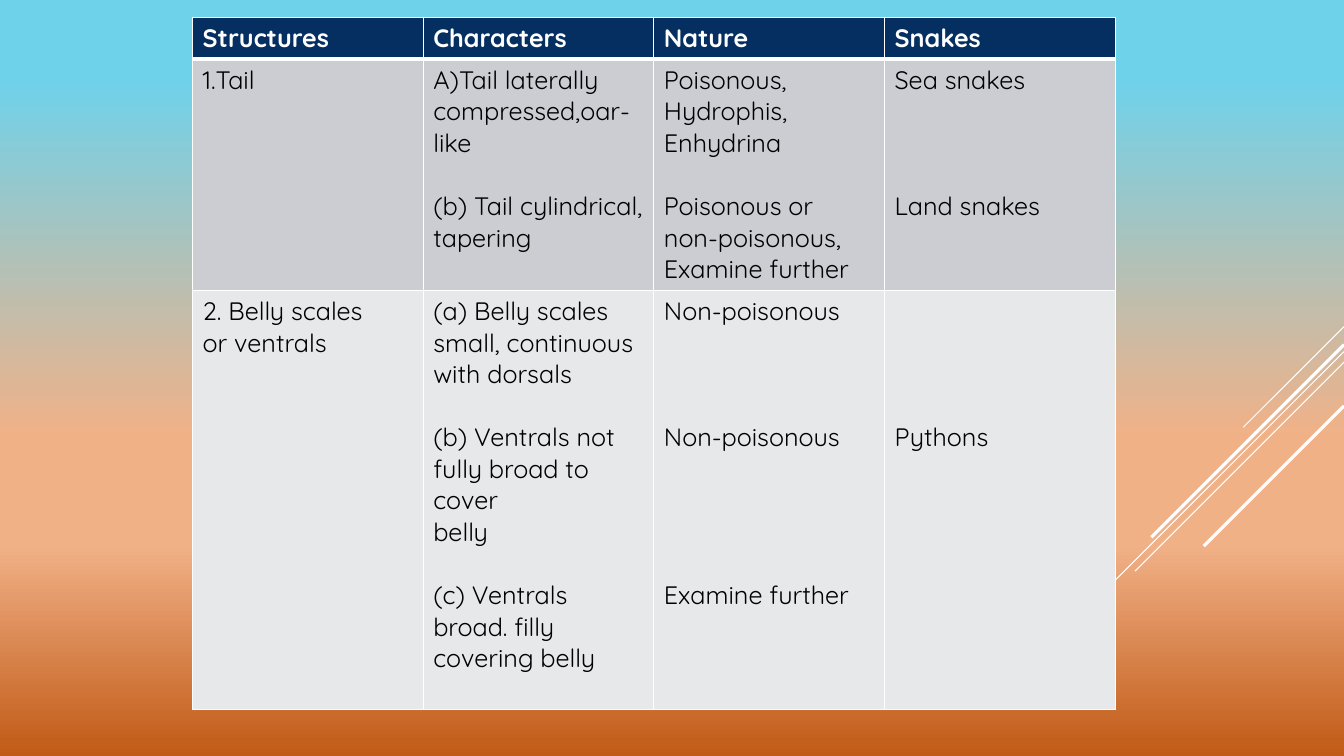
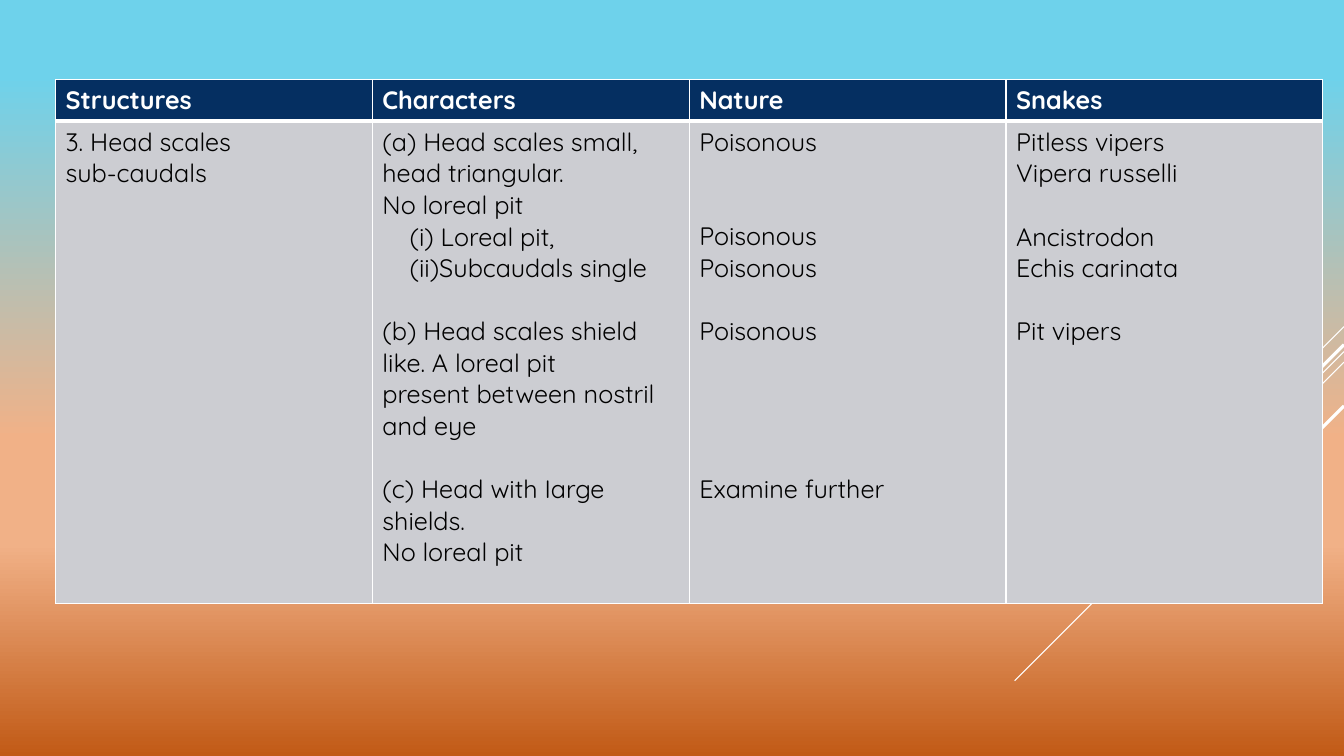
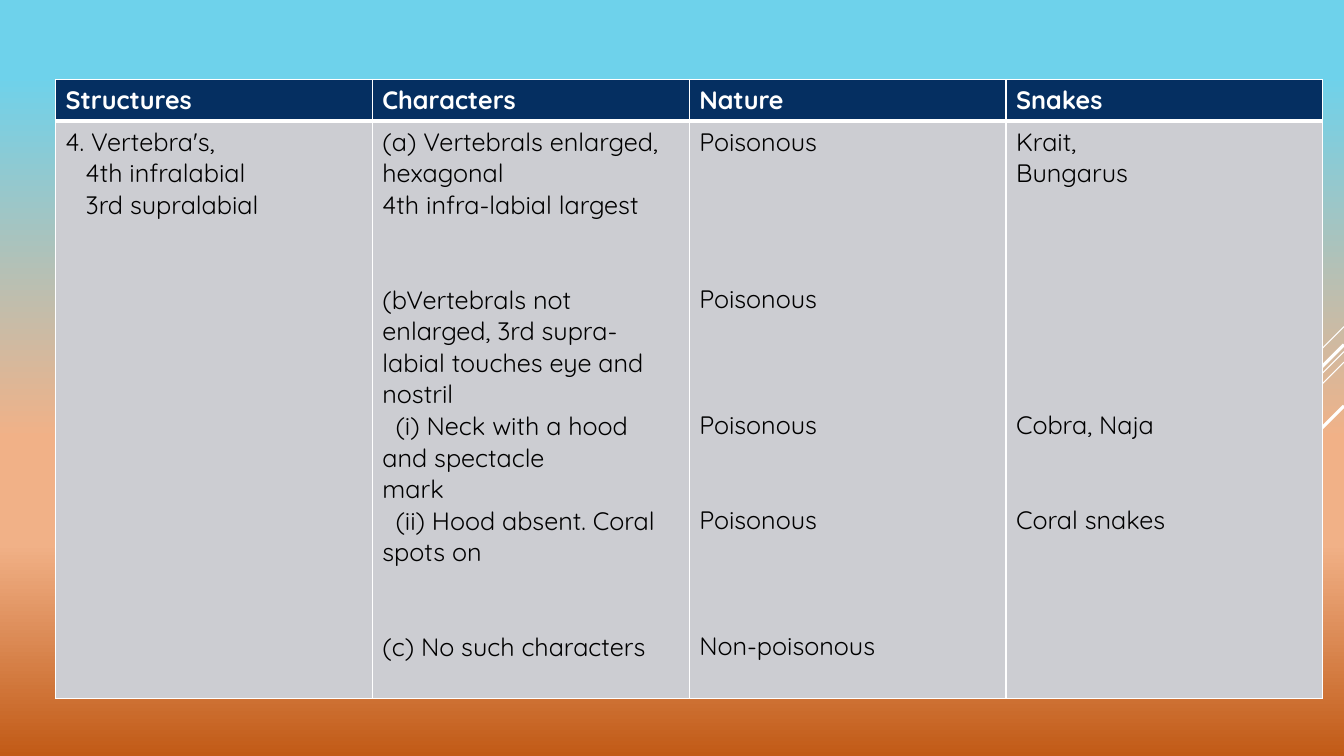
"""Build three slides with a key for telling poisonous snakes apart."""
from dataclasses import dataclass
from itertools import product

from lxml import etree
from pptx import Presentation
from pptx import util as u
from pptx.dml.color import RGBColor
from pptx.enum import shapes
from pptx.oxml.ns import qn

WIDTH, HEIGHT = u.Inches(13.33), u.Inches(7.5)
FONT, SIZE = "Quicksand", u.Pt(18)
LEADING, INSET = u.Pt(22.5), u.Inches(0.05)
COLORS = {"white": "FFFFFF", "ink": "000000", "header": "052F61",
          "odd": "CCCDD2", "even": "E7E8EA"}
SKY = ((10, "6ED2EB"), (58, "F1B187"), (72, "F1B187"), (100, "C15A16"))
HEADINGS = ("Structures", "Characters", "Nature", "Snakes")


@dataclass(frozen=True)
class Streak:
    top: float
    reach: float
    weight: float


@dataclass(frozen=True)
class Line:
    text: str
    gap: int = 0
    indent: float = 0


@dataclass(frozen=True)
class Entry:
    lines: int
    cells: tuple[tuple[Line, ...], ...]


@dataclass(frozen=True)
class Key:
    left: float
    top: float
    width: float
    entries: tuple[Entry, ...]


STREAKS = (Streak(43.2, 7.5, 0.75), Streak(46.5, 24.5, 0.75),
           Streak(47.9, 15.55, 0.75), Streak(45.6, 14.33, 2.25),
           Streak(53.7, 10.43, 2.25))

TAIL = Entry(7, (
    (Line("1.Tail"),),
    (Line("A)Tail laterally compressed,oar-like"),
     Line("(b) Tail cylindrical, tapering", gap=1)),
    (Line("Poisonous,"), Line("Hydrophis,"), Line("Enhydrina"),
     Line("Poisonous or", gap=1), Line("non-poisonous,"),
     Line("Examine further")),
    (Line("Sea snakes"), Line("Land snakes", gap=3)),
))
BELLY = Entry(13, (
    (Line("2. Belly scales"), Line("or ventrals")),
    (Line("(a) Belly scales small, continuous"), Line("with dorsals"),
     Line("(b) Ventrals not fully broad to cover", gap=1), Line("belly"),
     Line("(c) Ventrals broad. filly covering belly", gap=1)),
    (Line("Non-poisonous"), Line("Non-poisonous", gap=3),
     Line("Examine further", gap=4)),
    (Line("Pythons", gap=4),),
))
HEAD = Entry(15, (
    (Line("3. Head scales"), Line("sub-caudals")),
    (Line("(a) Head scales small, head triangular."), Line("No loreal pit"),
     Line("(i) Loreal pit,", indent=0.27),
     Line("(ii)Subcaudals single", indent=0.27),
     Line("(b) Head scales shield like. A loreal pit", gap=1),
     Line("present between nostril and eye"),
     Line("(c) Head with Iarge shields.", gap=1), Line("No loreal pit")),
    (Line("Poisonous"), Line("Poisonous", gap=2), Line("Poisonous"),
     Line("Poisonous", gap=1), Line("Examine further", gap=4)),
    (Line("Pitless vipers"), Line("Vipera russelli"),
     Line("Ancistrodon", gap=1), Line("Echis carinata"),
     Line("Pit vipers", gap=1)),
))
VERTEBRAE = Entry(18, (
    (Line("4. Vertebra's,"), Line("4th infralabial", indent=0.2),
     Line("3rd supralabial", indent=0.2)),
    (Line("(a) Vertebrals enlarged, hexagonal"),
     Line("4th infra-labial largest"),
     Line("(bVertebrals not enlarged, 3rd supra-", gap=2),
     Line("labial touches eye and nostril"),
     Line("(i) Neck with a hood", indent=0.13), Line("and spectacle"),
     Line("mark"),
     Line("(ii) Hood absent. Coral spots on", indent=0.13),
     Line("(c) No such characters", gap=2)),
    (Line("Poisonous"), Line("Poisonous", gap=4), Line("Poisonous", gap=3),
     Line("Poisonous", gap=2), Line("Non-poisonous", gap=3)),
    (Line("Krait,"), Line("Bungarus"), Line("Cobra, Naja", gap=7),
     Line("Coral snakes", gap=2)),
))
HEADER = Entry(1, tuple((Line(heading),) for heading in HEADINGS))
KEYS = (Key(14.33, 2.3, 68.64, (TAIL, BELLY)),
        Key(4.13, 10.5, 94.3, (HEAD,)),
        Key(4.13, 10.5, 94.3, (VERTEBRAE,)))


def across(percent: float) -> int:
    """Turn a share of the slide's width into a length."""
    return int(WIDTH * percent / 100)


def down(percent: float) -> int:
    """Turn a share of the slide's height into a length."""
    return int(HEIGHT * percent / 100)


def rgb(name: str) -> RGBColor:
    """Look up a named colour."""
    return RGBColor.from_string(COLORS[name])


def add_color(parent, value: str) -> None:
    """Append a plain colour to a fill or gradient stop."""
    etree.SubElement(parent, qn("a:srgbClr"), val=value)


def paint_sky(master) -> None:
    """Give the master its vertical gradient."""
    fill = master.background.fill
    fill.gradient()
    fill.gradient_angle = 270
    stops = master.element.find(".//" + qn("p:bg")).find(".//" + qn("a:gsLst"))
    for stop in list(stops):
        stops.remove(stop)
    for percent, value in SKY:
        add_color(etree.SubElement(stops, qn("a:gs"), pos=str(percent * 1000)), value)


def draw_streak(slide, streak: Streak) -> None:
    """Draw a line falling at 45 degrees from the right edge."""
    reach, top = across(streak.reach), down(streak.top)
    ray = slide.shapes.add_connector(shapes.MSO_CONNECTOR.STRAIGHT,
                                     WIDTH, top, WIDTH - reach, top + reach)
    ray.line.color.rgb = rgb("white")
    ray.line.width = u.Pt(streak.weight)
    etree.SubElement(ray.element.spPr, qn("a:effectLst"))


def write(cell, lines: tuple[Line, ...], *, color: str, bold: bool) -> None:
    """Fill a cell with formatted paragraphs."""
    frame = cell.text_frame
    cell.margin_top = INSET + lines[0].gap * LEADING
    for number, line in enumerate(lines):
        paragraph = frame.add_paragraph() if number else frame.paragraphs[0]
        if number and line.gap:
            paragraph.space_before = u.Emu(line.gap * LEADING)
        if line.indent:
            properties = paragraph._p.get_or_add_pPr()
            properties.set("marL", "0")
            properties.set("indent", str(u.Inches(line.indent)))
        run = paragraph.add_run()
        run.text = line.text
        run.font.name, run.font.size, run.font.bold = FONT, SIZE, bold
        run.font.color.rgb = rgb(color)


def set_borders(cell, *, top: float, bottom: float) -> None:
    """Frame a cell in white, with its own top and bottom weights."""
    properties = cell._tc.get_or_add_tcPr()
    weights = {"a:lnL": 1, "a:lnR": 1, "a:lnT": top, "a:lnB": bottom}
    for place, (tag, weight) in enumerate(weights.items()):
        edge = etree.Element(qn(tag), w=str(u.Pt(weight)))
        add_color(etree.SubElement(edge, qn("a:solidFill")), COLORS["white"])
        properties.insert(place, edge)


def draw_key(slide, key: Key) -> None:
    """Draw the table with its header and entries."""
    entries = (HEADER, *key.entries)
    heights = [entry.lines * LEADING + 2 * INSET for entry in entries]
    table = slide.shapes.add_table(
        len(entries), len(HEADINGS), across(key.left), down(key.top),
        across(key.width), sum(heights)).table
    table.horz_banding = False
    for row, height in zip(table.rows, heights):
        row.height = height
    for row, column in product(range(len(entries)), range(len(HEADINGS))):
        cell = table.cell(row, column)
        cell.fill.solid()
        cell.fill.fore_color.rgb = rgb(("header", "odd", "even")[row])
        set_borders(cell, top=3 if row == 1 else 1, bottom=1 if row else 3)
        write(cell, entries[row].cells[column],
              color="ink" if row else "white", bold=not row)


def main() -> None:
    """Build and save the presentation."""
    deck = Presentation()
    deck.slide_width, deck.slide_height = WIDTH, HEIGHT
    paint_sky(deck.slide_master)
    for key in KEYS:
        slide = deck.slides.add_slide(deck.slide_layouts[6])
        for streak in STREAKS:
            draw_streak(slide, streak)
        draw_key(slide, key)
    deck.save("out.pptx")


if __name__ == "__main__":
    main()
